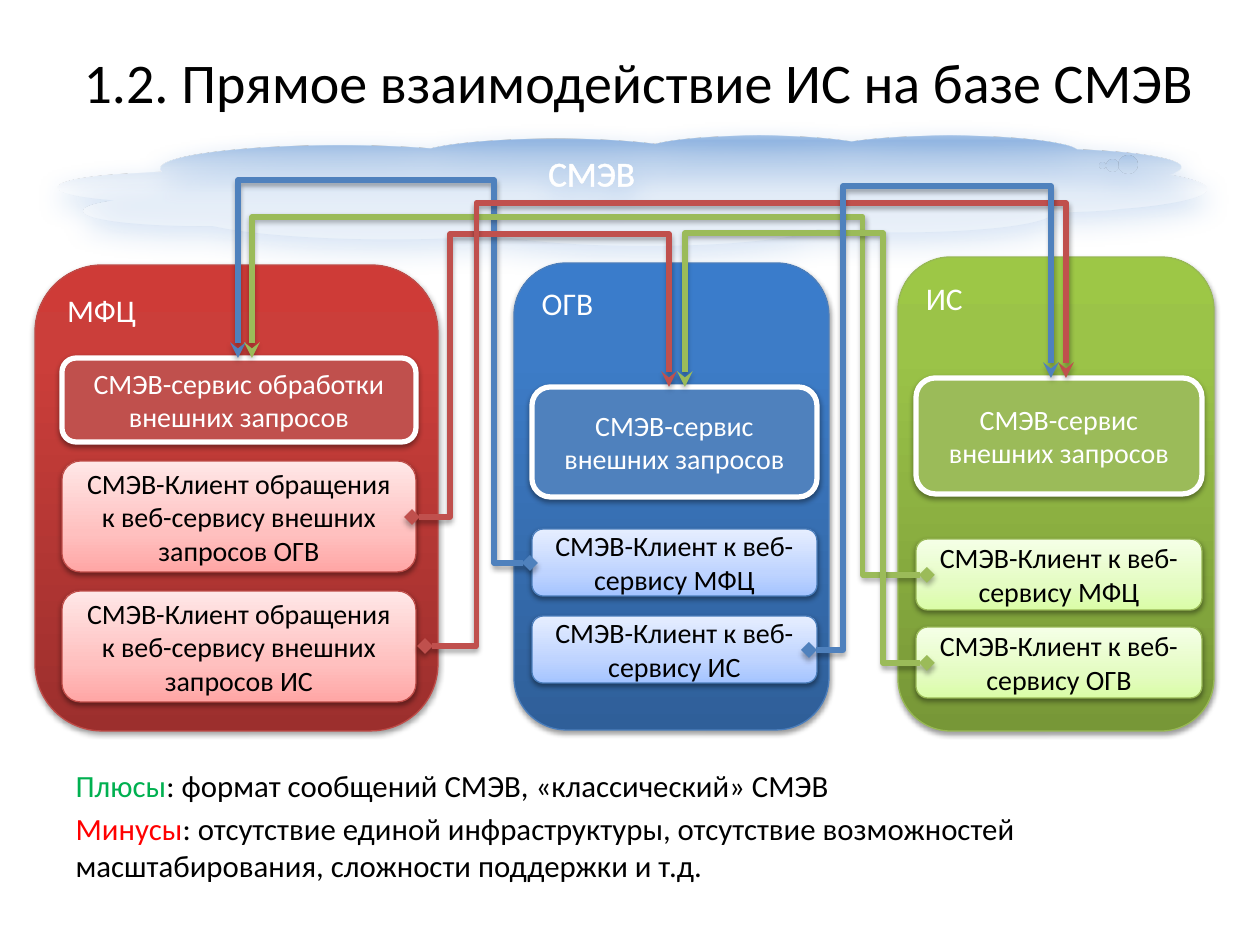
from dataclasses import dataclass

from lxml import etree
from pptx import Presentation
from pptx.dml.color import RGBColor
from pptx.enum.shapes import MSO_CONNECTOR, MSO_SHAPE
from pptx.enum.text import MSO_ANCHOR, MSO_AUTO_SIZE, PP_ALIGN
from pptx.oxml.ns import qn
from pptx.util import Emu, Pt

ROUND, CLOUD = MSO_SHAPE.ROUNDED_RECTANGLE, MSO_SHAPE.CLOUD_CALLOUT
ELBOW = MSO_CONNECTOR.ELBOW
LEFT, CENTER = PP_ALIGN.LEFT, PP_ALIGN.CENTER
TOP, MIDDLE = MSO_ANCHOR.TOP, MSO_ANCHOR.MIDDLE
NO_FIT = MSO_AUTO_SIZE.NONE

FONT = "Calibri"
WHITE, BLACK = "FFFFFF", "000000"
RED, BLUE, GREEN = "C0504D", "4F81BD", "9BBB59"


@dataclass
class Theme:
    main: str
    edge: str
    panel: list
    client: list


@dataclass
class System:
    name: str
    theme: Theme
    box: tuple
    left: int
    width: int
    service: str
    span: tuple  # top and height of the service
    clients: list
    tops: tuple
    height: int


@dataclass
class Route:
    color: str
    start: tuple
    bend: tuple  # x of the riser, y of the crossbar
    end: tuple


def px(n: int) -> Emu:
    return Emu(round(n * 914400 / 126))


def rgb(code: str) -> RGBColor:
    return RGBColor.from_string(code)


def sub(node, tag: str, **attrs):
    return etree.SubElement(node, qn(tag), {k: str(v) for k, v in attrs.items()})


def tint(node, code: str, alpha: int) -> None:
    color = sub(node, "a:srgbClr", val=code)
    if alpha < 100:
        sub(color, "a:alpha", val=alpha * 1000)


def shade(shape, code=BLACK, alpha=38, blur=3.1, dist=1.6) -> None:
    effects = sub(shape._element.spPr, "a:effectLst")
    glow = sub(effects, "a:outerShdw", blurRad=Pt(blur), dist=Pt(dist),
               dir=5400000, algn="ctr", rotWithShape=0)
    tint(glow, code, alpha)


def blend(shape, stops: list) -> None:
    """Fill from bottom to top with (position, colour, opacity) stops."""
    shape.fill.gradient()
    shape.fill.gradient_angle = 90
    items = shape._element.spPr.find(".//" + qn("a:gsLst"))
    for old in list(items):
        items.remove(old)
    for pos, code, alpha in stops:
        tint(sub(items, "a:gs", pos=pos * 1000), code, alpha)


def write(para, text: str, size: float, color: str):
    run = para.add_run()
    run.text = text
    run.font.name, run.font.size = FONT, Pt(size)
    run.font.color.rgb = rgb(color)
    return run


def place(shape, box: tuple) -> None:
    shape.left, shape.top, shape.width, shape.height = map(px, box)


def draw_box(shapes, box: tuple, fill, edge: str, weight: float, text: str,
             size: int, color: str, align=CENTER, anchor=MIDDLE):
    shape = shapes.add_shape(ROUND, *map(px, box))
    if isinstance(fill, str):
        shape.fill.solid()
        shape.fill.fore_color.rgb = rgb(fill)
    else:
        blend(shape, fill)
    shape.line.color.rgb = rgb(edge)
    shape.line.width = Pt(weight)
    shade(shape)
    frame = shape.text_frame
    frame.word_wrap, frame.vertical_anchor = True, anchor
    para = frame.paragraphs[0]
    para.alignment = align
    write(para, text, size, color)


def draw_system(shapes, item: System) -> None:
    group = shapes.add_group_shape().shapes
    theme = item.theme
    draw_box(group, item.box, theme.panel, theme.edge, 0.75,
             item.name, 18, WHITE, LEFT, TOP)
    top, tall = item.span
    draw_box(group, (item.left, top, item.width, tall), theme.main, WHITE, 3,
             item.service, 16, WHITE)
    for text, top in zip(item.clients, item.tops):
        draw_box(group, (item.left, top, item.width, item.height),
                 theme.client, theme.edge, 0.75, text, 16, BLACK)


def draw_route(shapes, item: Route) -> None:
    line = shapes.add_connector(ELBOW, *map(px, item.start + item.end))
    line.line.color.rgb = rgb(item.color)
    line.line.width = Pt(3)
    # Four-part elbow: each bend is a share of the whole run
    geom = line._element.spPr.find(qn("a:prstGeom"))
    geom.set("prst", "bentConnector4")
    guides = geom.find(qn("a:avLst"))
    if guides is None:
        guides = sub(geom, "a:avLst")
    for i, (a, mid, b) in enumerate(zip(item.start, item.bend, item.end), 1):
        share = round((mid - a) / (b - a) * 100000)
        sub(guides, "a:gd", name=f"adj{i}", fmla=f"val {share}")
    ends = line.line._get_or_add_ln()
    sub(ends, "a:headEnd", type="diamond")
    sub(ends, "a:tailEnd", type="stealth")
    shade(line, alpha=35, dist=1.8)


def draw_cloud(shapes) -> None:
    cloud = shapes.add_shape(CLOUD, *map(px, (59, 135, 1147, 110)))
    cloud.adjustments[0], cloud.adjustments[1] = 0.41, -0.22
    blend(cloud, [(48, WHITE, 37), (83, "A0BFE4", 72),
                  (95, "6A9BD7", 68), (100, "79A6DB", 65)])
    cloud.line.fill.background()
    shade(cloud, "8EB4E3", 88, 15, 6)
    frame = cloud.text_frame
    frame.word_wrap, frame.vertical_anchor = True, TOP
    frame.margin_top = 0
    para = frame.paragraphs[0]
    para.alignment = CENTER
    run = write(para, "СМЭВ", 20, WHITE)
    edge = etree.Element(qn("a:ln"), w=str(Pt(1.45)))
    tint(sub(edge, "a:solidFill"), WHITE, 100)
    run.font._element.insert(0, edge)


def ramp(low: str, mid: str, high: str, pos: int) -> list:
    return [(0, low, 100), (pos, mid, 100), (100, high, 100)]


ROSE = Theme(RED, "BF4C48", ramp("9C2F2D", "CB3E3A", "CE3B37", 80),
             ramp("FFA6A5", "FFC0BF", "FFE7E7", 35))
SKY = Theme(BLUE, "4B7EBC", ramp("2F5F99", "3D7CC7", "3A7CCB", 80),
            ramp("A4C4FF", "BFD4FF", "E6EEFF", 35))
LIME = Theme(GREEN, "98B955", ramp("779737", "9BC348", "9DC746", 80),
             ramp("DAFDA7", "E4FCC2", "F5FFE7", 35))

LONG = "СМЭВ-Клиент обращения к веб-сервису внешних запросов "
SHORT = "СМЭВ-Клиент к веб-сервису "
SERVE = "СМЭВ-сервис внешних запросов"
SYSTEMS = [
    System("МФЦ", ROSE, (35, 265, 403, 466), 62, 354,
           "СМЭВ-сервис обработки внешних запросов", (358, 84),
           [LONG + "ОГВ", LONG + "ИС"], (461, 591), 111),
    System("ОГВ", SKY, (514, 263, 315, 467), 532, 285, SERVE, (387, 110),
           [SHORT + "МФЦ", SHORT + "ИС"], (529, 616), 67),
    System("ИС", LIME, (898, 257, 316, 474), 916, 286, SERVE, (378, 116),
           [SHORT + "МФЦ", SHORT + "ОГВ"], (539, 627), 71),
]
ROUTES = [
    Route(BLUE, (530, 563), (494, 180), (238, 358)),
    Route(GREEN, (927, 575), (863, 217), (252, 358)),
    Route(RED, (412, 517), (450, 234), (669, 387)),
    Route(RED, (425, 646), (476, 203), (1066, 378)),
    Route(GREEN, (927, 663), (883, 233), (685, 387)),
    Route(BLUE, (809, 650), (843, 186), (1051, 378)),
]
NOTES = [
    ("Плюсы", "00B050", ": формат сообщений СМЭВ, «классический» СМЭВ"),
    ("Минусы", "FF0000", ": отсутствие единой инфраструктуры, отсутствие "
     "возможностей масштабирования, сложности поддержки и т.д."),
]


def main() -> None:
    deck = Presentation()
    deck.slide_width, deck.slide_height = px(1260), px(945)
    slide = deck.slides.add_slide(deck.slide_layouts[1])
    shapes = slide.shapes

    # Title
    title = shapes.title
    place(title, (63, 38, 1152, 87))
    title.text_frame.auto_size = NO_FIT
    title.text_frame.vertical_anchor = MIDDLE
    head = title.text_frame.paragraphs[0]
    head.alignment = CENTER
    write(head, "1.2. Прямое взаимодействие ИС на базе СМЭВ", 32, BLACK)

    # Diagram
    draw_cloud(shapes)
    for item in SYSTEMS:
        draw_system(shapes, item)
    for item in ROUTES:
        draw_route(shapes, item)

    # Pros and cons
    body = slide.placeholders[1]
    place(body, (63, 760, 1134, 118))
    frame = body.text_frame
    frame.auto_size = NO_FIT
    for i, (label, color, text) in enumerate(NOTES):
        para = frame.add_paragraph() if i else frame.paragraphs[0]
        props = para._p.get_or_add_pPr()
        props.set("marL", "0")
        props.set("indent", "0")
        sub(props, "a:buNone")
        write(para, label, 17.6, color)
        write(para, text, 17.6, BLACK)

    deck.save("out.pptx")


if __name__ == "__main__":
    main()
